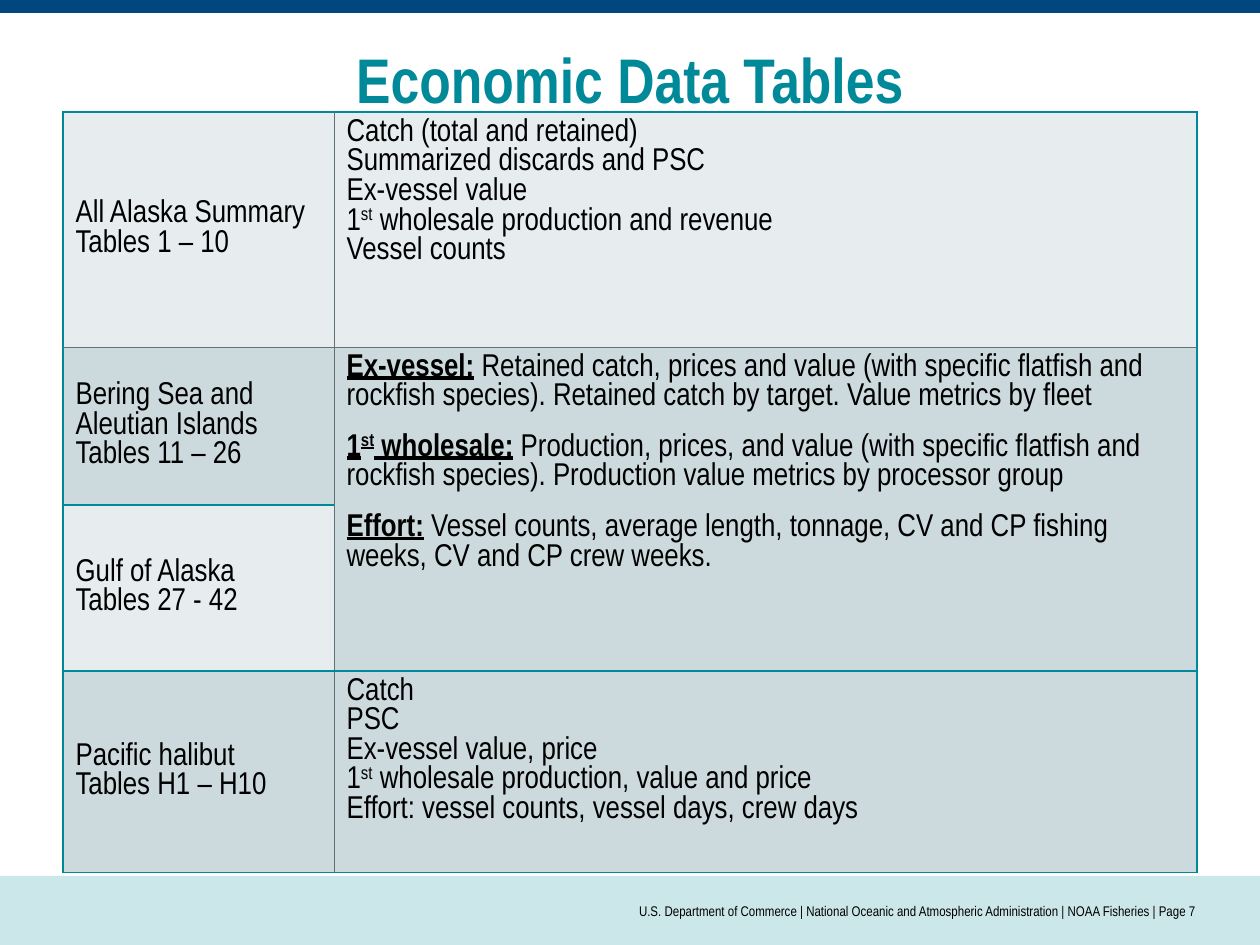
from dataclasses import dataclass

from lxml import etree
from pptx import Presentation
from pptx.dml.color import RGBColor
from pptx.enum.shapes import MSO_SHAPE
from pptx.enum.text import MSO_ANCHOR, PP_ALIGN
from pptx.oxml.ns import qn
from pptx.util import Emu, Pt

RECT = MSO_SHAPE.RECTANGLE
TOP, MIDDLE, BOTTOM = MSO_ANCHOR.TOP, MSO_ANCHOR.MIDDLE, MSO_ANCHOR.BOTTOM
LEFT, CENTER, RIGHT = PP_ALIGN.LEFT, PP_ALIGN.CENTER, PP_ALIGN.RIGHT
PX_PER_INCH = 126


@dataclass(frozen=True)
class Theme:
    font: str = "Arial Narrow"
    navy: str = "00467F"
    teal: str = "008998"
    grid: str = "5F7376"
    pale_teal: str = "CCE7EA"
    light: str = "E7EDEF"
    mid: str = "CCDADD"
    black: str = "000000"
    title_pt: int = 36
    body_pt: int = 18
    footer_pt: int = 8
    para_gap_pt: int = 12
    thick_pt: float = 1
    thin_pt: float = 0.5


@dataclass(frozen=True)
class Run:
    text: str
    strong: bool = False
    raised: bool = False


@dataclass(frozen=True)
class TableCell:
    row: int
    col: int
    fill: str
    paragraphs: list
    gap_pt: int = 0


@dataclass(frozen=True)
class Band:
    top: int
    height: int
    fill: str


@dataclass(frozen=True)
class Label:
    box: tuple
    text: str
    size: int
    color: str
    align: PP_ALIGN
    anchor: MSO_ANCHOR
    margins: dict
    bold: bool = False


T = Theme()

BANDS = [Band(876, 69, T.pale_teal), Band(0, 13, T.navy)]
LABELS = [
    Label((63, 33, 1134, 93), "Economic Data Tables", T.title_pt, T.teal,
          CENTER, BOTTOM, {"margin_bottom": 10}, bold=True),
    Label((315, 876, 882, 69),
          "U.S. Department of Commerce | National Oceanic and Atmospheric "
          "Administration | NOAA Fisheries | Page 7",
          T.footer_pt, T.black, RIGHT, MIDDLE,
          {"margin_left": 0, "margin_right": 0}),
]

TABLE_LEFT, TABLE_TOP = 63, 112
COL_WIDTHS = [271, 863]
ROW_HEIGHTS = [235, 158, 166, 145]


def first_wholesale(rest: str, strong: bool = False) -> list[Run]:
    return [Run("1", strong), Run("st", strong, True), Run(rest, strong)]


CELLS = [
    TableCell(0, 0, T.light, ["All Alaska Summary", "Tables 1 – 10"]),
    TableCell(0, 1, T.light, [
        "Catch (total and retained)",
        "Summarized discards and PSC",
        "Ex-vessel value",
        first_wholesale(" wholesale production and revenue"),
        "Vessel counts",
    ]),
    TableCell(1, 0, T.mid, ["Bering Sea and Aleutian Islands", "Tables 11 – 26"]),
    TableCell(1, 1, T.mid, [
        [Run("Ex-vessel:", True),
         Run(" Retained catch, prices and value (with specific flatfish and "
             "rockfish species). Retained catch by target. Value metrics by fleet")],
        [*first_wholesale(" wholesale:", True),
         Run(" Production, prices, and value (with specific flatfish and "
             "rockfish species). Production value metrics by processor group")],
        [Run("Effort:", True),
         Run(" Vessel counts, average length, tonnage, CV and CP fishing weeks, "
             "CV and CP crew weeks.")],
    ], T.para_gap_pt),
    TableCell(2, 0, T.light, ["Gulf of Alaska", "Tables 27 - 42"]),
    TableCell(3, 0, T.mid, ["Pacific halibut", "Tables H1 – H10"]),
    TableCell(3, 1, T.mid, [
        "Catch",
        "PSC",
        "Ex-vessel value, price",
        first_wholesale(" wholesale production, value and price"),
        "Effort: vessel counts, vessel days, crew days",
    ]),
]


def px(n: int) -> Emu:
    return Emu(round(n * 914400 / PX_PER_INCH))


def set_attrs(obj, values: dict) -> None:
    for name, value in values.items():
        setattr(obj, name, value)


def add_run(p, run: Run, size: int, color: str, bold: bool = False) -> None:
    r = p.add_run()
    r.text = run.text
    set_attrs(r.font, {"name": T.font, "size": Pt(size),
                       "bold": bold or run.strong, "underline": run.strong})
    r.font.color.rgb = RGBColor.from_string(color)
    if run.raised:
        r.font._element.set("baseline", "30000")


def add_band(s, band: Band, width: Emu) -> None:
    sp = s.shapes.add_shape(RECT, 0, px(band.top), width, px(band.height))
    sp.shadow.inherit = False
    sp.fill.solid()
    sp.fill.fore_color.rgb = RGBColor.from_string(band.fill)
    sp.line.fill.background()


def add_label(s, label: Label) -> None:
    tf = s.shapes.add_textbox(*map(px, label.box)).text_frame
    set_attrs(tf, {"word_wrap": True, "vertical_anchor": label.anchor})
    set_attrs(tf, {side: px(n) for side, n in label.margins.items()})
    p = tf.paragraphs[0]
    p.alignment = label.align
    add_run(p, Run(label.text), label.size, label.color, label.bold)


def add_borders(cell, row: int, col: int) -> None:
    """Teal outer frame and lower row lines; thin lines elsewhere."""
    thick = {"a:lnL": col == 0, "a:lnR": col == len(COL_WIDTHS) - 1,
             "a:lnT": row != 1, "a:lnB": row != 0}
    tcPr = cell._tc.get_or_add_tcPr()
    for tag, is_thick in thick.items():
        width = T.thick_pt if is_thick else T.thin_pt
        ln = etree.SubElement(tcPr, qn(tag), w=str(Pt(width)))
        fill = etree.SubElement(ln, qn("a:solidFill"))
        etree.SubElement(fill, qn("a:srgbClr"), val=T.teal if is_thick else T.grid)


def fill_cell(cell, item: TableCell) -> None:
    cell.fill.solid()
    cell.fill.fore_color.rgb = RGBColor.from_string(item.fill)
    cell.vertical_anchor = MIDDLE if item.col == 0 else TOP
    tf = cell.text_frame
    for i, content in enumerate(item.paragraphs):
        p = tf.add_paragraph() if i else tf.paragraphs[0]
        set_attrs(p, {"alignment": LEFT, "space_after": Pt(item.gap_pt)})
        for run in [Run(content)] if isinstance(content, str) else content:
            add_run(p, run, T.body_pt, T.black)


def add_data_table(s) -> None:
    table = s.shapes.add_table(
        len(ROW_HEIGHTS), len(COL_WIDTHS), px(TABLE_LEFT), px(TABLE_TOP),
        px(sum(COL_WIDTHS)), px(sum(ROW_HEIGHTS))).table
    set_attrs(table, {"first_row": False, "horz_banding": False})
    for column, width in zip(table.columns, COL_WIDTHS):
        column.width = px(width)
    for i, height in enumerate(ROW_HEIGHTS):
        table.rows[i].height = px(height)
        for j in range(len(COL_WIDTHS)):
            add_borders(table.cell(i, j), i, j)
    # The two regions share one description
    table.cell(1, 1).merge(table.cell(2, 1))
    for item in CELLS:
        fill_cell(table.cell(item.row, item.col), item)


def main() -> None:
    prs = Presentation()
    set_attrs(prs, {"slide_width": px(1260), "slide_height": px(945)})
    s = prs.slides.add_slide(prs.slide_layouts[6])
    # Page bands
    for band in BANDS:
        add_band(s, band, prs.slide_width)
    # Title, footer and table
    for label in LABELS:
        add_label(s, label)
    add_data_table(s)
    prs.save("out.pptx")


if __name__ == "__main__":
    main()
